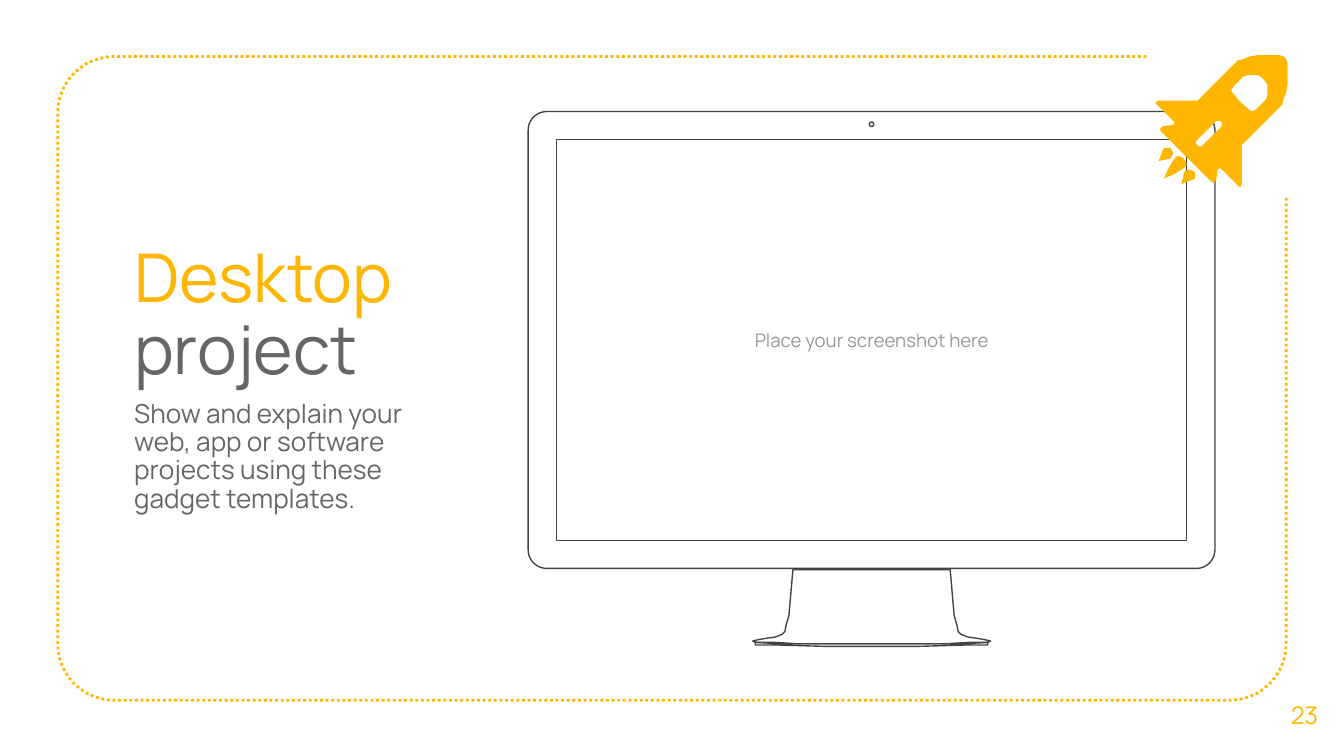
import math
from dataclasses import dataclass
from typing import Callable

import pptx
import pptx.dml.color
import pptx.enum.dml
import pptx.enum.text
import pptx.util

Point = tuple[float, float]
Contour = list[Point]

COLORS = {
    "accent": "FFB600",
    "paper": "FFFFFF",
    "device": "434343",
    "hint": "999999",
    "body": "666666",
}
FONT = "Manrope"
MONITOR_CENTER = 466.92
ROCKET_LEFT, ROCKET_TOP, ROCKET_SIZE = 619.2, 29.52, 70.56


@dataclass(frozen=True)
class TextRun:
    text: str
    size: float
    color: str


@dataclass(frozen=True)
class TextBlock:
    left: float
    top: float
    width: float
    height: float
    paragraphs: tuple[tuple[TextRun, ...], ...]
    centered: bool = True
    space_before: float = 0
    line_spacing: float = 1.0


@dataclass(frozen=True)
class Outline:
    contours: list[Contour]
    fill: str | None = None
    line: str | None = None
    line_width: float = 0
    dotted: bool = False
    closed: bool = True


def rgb(name: str) -> pptx.dml.color.RGBColor:
    return pptx.dml.color.RGBColor.from_string(COLORS[name])


def arc(x: float, y: float, radius: float, start: float, sweep: float, steps: int) -> Contour:
    angles = [math.radians(start + sweep * step / steps) for step in range(steps + 1)]
    return [(x + radius * math.cos(angle), y + radius * math.sin(angle)) for angle in angles]


def rounded_rectangle(left: float, top: float, right: float, bottom: float, radius: float) -> Contour:
    centers = [
        (left + radius, top + radius, 270),
        (left + radius, bottom - radius, 180),
        (right - radius, bottom - radius, 90),
        (right - radius, top + radius, 0),
    ]
    return [point for x, y, start in centers for point in arc(x, y, radius, start, -90, 12)]


def with_mirror(half: Contour, reflect: Callable[[Point], Point]) -> Contour:
    return half + [reflect(point) for point in reversed(half)]


def reflect_rocket(point: Point) -> Point:
    return ROCKET_SIZE - point[1], ROCKET_SIZE - point[0]


def monitor_part(half: Contour) -> Contour:
    left_half = [(MONITOR_CENTER - offset, y) for offset, y in half]
    return with_mirror(left_half, lambda point: (2 * MONITOR_CENTER - point[0], point[1]))


def place_rocket(contours: list[Contour]) -> Outline:
    placed = [[(x + ROCKET_LEFT, y + ROCKET_TOP) for x, y in contour] for contour in contours]
    return Outline(placed, fill="accent")


def draw_outline(shapes, outline: Outline) -> None:
    contours = [
        [(pptx.util.Pt(x), pptx.util.Pt(y)) for x, y in contour] for contour in outline.contours
    ]
    builder = shapes.build_freeform(*contours[0][0])
    for index, contour in enumerate(contours):
        if index:
            builder.move_to(*contour[0])
        builder.add_line_segments(contour[1:], close=outline.closed)
    shape = builder.convert_to_shape()
    shape.shadow.inherit = False
    if outline.fill:
        shape.fill.solid()
        shape.fill.fore_color.rgb = rgb(outline.fill)
    else:
        shape.fill.background()
    if outline.line:
        shape.line.color.rgb = rgb(outline.line)
        shape.line.width = pptx.util.Pt(outline.line_width)
        if outline.dotted:
            shape.line.dash_style = pptx.enum.dml.MSO_LINE.ROUND_DOT
    else:
        shape.line.fill.background()


def draw_text(shapes, block: TextBlock) -> None:
    bounds = (block.left, block.top, block.width, block.height)
    frame = shapes.add_textbox(*(pptx.util.Pt(length) for length in bounds)).text_frame
    frame.word_wrap = True
    frame.vertical_anchor = pptx.enum.text.MSO_ANCHOR.MIDDLE
    frame.margin_left = frame.margin_right = pptx.util.Pt(7.2)
    frame.margin_top = frame.margin_bottom = pptx.util.Pt(7.2)
    alignment = pptx.enum.text.PP_ALIGN
    for index, text_runs in enumerate(block.paragraphs):
        paragraph = frame.add_paragraph() if index else frame.paragraphs[0]
        paragraph.alignment = alignment.CENTER if block.centered else alignment.LEFT
        paragraph.space_before = pptx.util.Pt(block.space_before)
        paragraph.line_spacing = block.line_spacing
        for text_run in text_runs:
            run = paragraph.add_run()
            run.text = text_run.text
            run.font.name = FONT
            run.font.size = pptx.util.Pt(text_run.size)
            run.font.color.rgb = rgb(text_run.color)


frame_path = [(614.16, 30.24)]
frame_path += rounded_rectangle(30.96, 30.24, 689.04, 375.12, 30.24)[:39]
frame_path += [(689.04, 105.12)]
FRAME = Outline([frame_path], line="accent", line_width=1.5, dotted=True, closed=False)

STAND = monitor_part([
    (42.12, 305.28), (42.84, 313.2), (43.56, 321.84), (44.28, 329.76), (45.72, 334.8),
    (46.44, 338.4), (47.88, 339.84), (51.48, 341.28), (56.52, 342), (60.84, 342.72),
    (63.72, 343.44), (62.28, 344.16), (52.2, 344.16), (39.96, 344.88),
])
FOOT = monitor_part([
    (24.12, 344.88), (50, 344.88), (62.28, 344.16), (62.28, 345.6), (49.32, 345.6), (24.12, 346.32),
])
CAMERA = arc(MONITOR_CENTER, 66.6, 1.2, 0, 360, 16)
SCREEN = [(635.76, 74.88), (635.76, 289.44), (298.08, 289.44), (298.08, 74.88)]
CASE = rounded_rectangle(282.96, 59.76, 650.88, 304.56, 10)
MONITOR = Outline([CAMERA, SCREEN, CASE, STAND, FOOT], "paper", "device", 0.75)

HULL = with_mirror([
    (68.4, 0.72), (66.24, 0), (62.64, 0), (59.04, 0), (54.72, 0), (50.4, 0.72), (46.8, 2.16),
    (43.92, 2.88), (41.76, 5.04), (22.32, 24.48), (1.44, 24.48), (0, 25.2), (0, 25.92),
    (0.72, 26.64), (10.08, 36), (9.36, 37.44), (3.6, 38.16), (2.16, 39.6), (2.88, 41.04),
], reflect_rocket)
WINDOW = with_mirror([
    (56.88, 12.24), (54.72, 10.8), (51.84, 10.8), (48.96, 10.8), (46.8, 11.52),
    (45.36, 12.96), (41.76, 16.56), (40.32, 18.72), (41.04, 20.16), (45.36, 25.2),
], reflect_rocket)
SLOT = with_mirror([
    (35.28, 36), (34.56, 35.28), (33.12, 35.28), (32.4, 35.28), (21.6, 46.08), (21.6, 47.52),
], reflect_rocket)
MIDDLE_FLAME = with_mirror([
    (15.12, 55.44), (13.68, 54.72), (12.24, 54), (10.8, 54.72), (10.08, 55.44),
    (8.64, 57.6), (6.48, 61.2), (5.04, 64.8), (4.32, 66.24),
], reflect_rocket)
SIDE_FLAME = [
    (5.76, 49.68), (4.32, 49.68), (3.6, 51.12), (2.88, 53.28), (1.44, 56.88), (4.32, 56.16),
    (7.92, 55.44), (8.64, 54), (9.36, 52.56), (8.64, 51.12), (7.92, 49.68), (6.48, 49.68),
]
OTHER_FLAME = [reflect_rocket(point) for point in SIDE_FLAME]
ROCKET = [[WINDOW, SLOT, HULL], [MIDDLE_FLAME], [OTHER_FLAME], [SIDE_FLAME]]

TEXT_BLOCKS = [
    TextBlock(298.08, 74.88, 337.68, 214.56, ((TextRun("Place your screenshot here", 10, "hint"),),)),
    TextBlock(677.52, 361.44, 42.48, 43.2, ((TextRun("23", 13, "accent"),),)),
    TextBlock(64.8, 30.24, 178.56, 345.6, (
        (TextRun("Desktop ", 36, "accent"), TextRun("project", 36, "body")),
        (TextRun("Show and explain your web, app or software projects using these gadget templates.",
                 14, "body"),),
    ), centered=False, space_before=6, line_spacing=0.9),
]


def main() -> None:
    presentation = pptx.Presentation()
    presentation.slide_width = pptx.util.Pt(720)
    presentation.slide_height = pptx.util.Pt(405)
    slide = presentation.slides.add_slide(presentation.slide_layouts[6])
    for outline in (FRAME, MONITOR):
        draw_outline(slide.shapes, outline)
    for block in TEXT_BLOCKS:
        draw_text(slide.shapes, block)
    rocket = slide.shapes.add_group_shape()
    for contours in ROCKET:
        draw_outline(rocket.shapes, place_rocket(contours))
    presentation.save("out.pptx")


if __name__ == "__main__":
    main()
